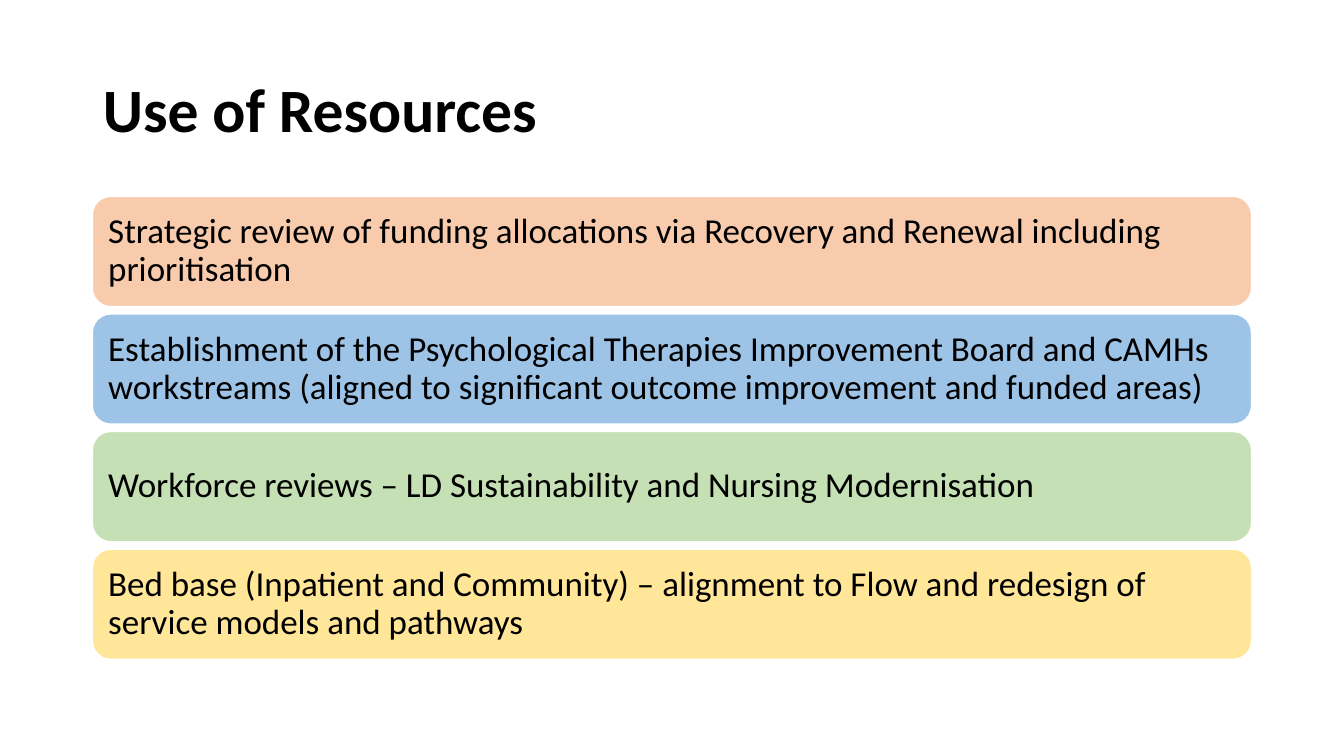
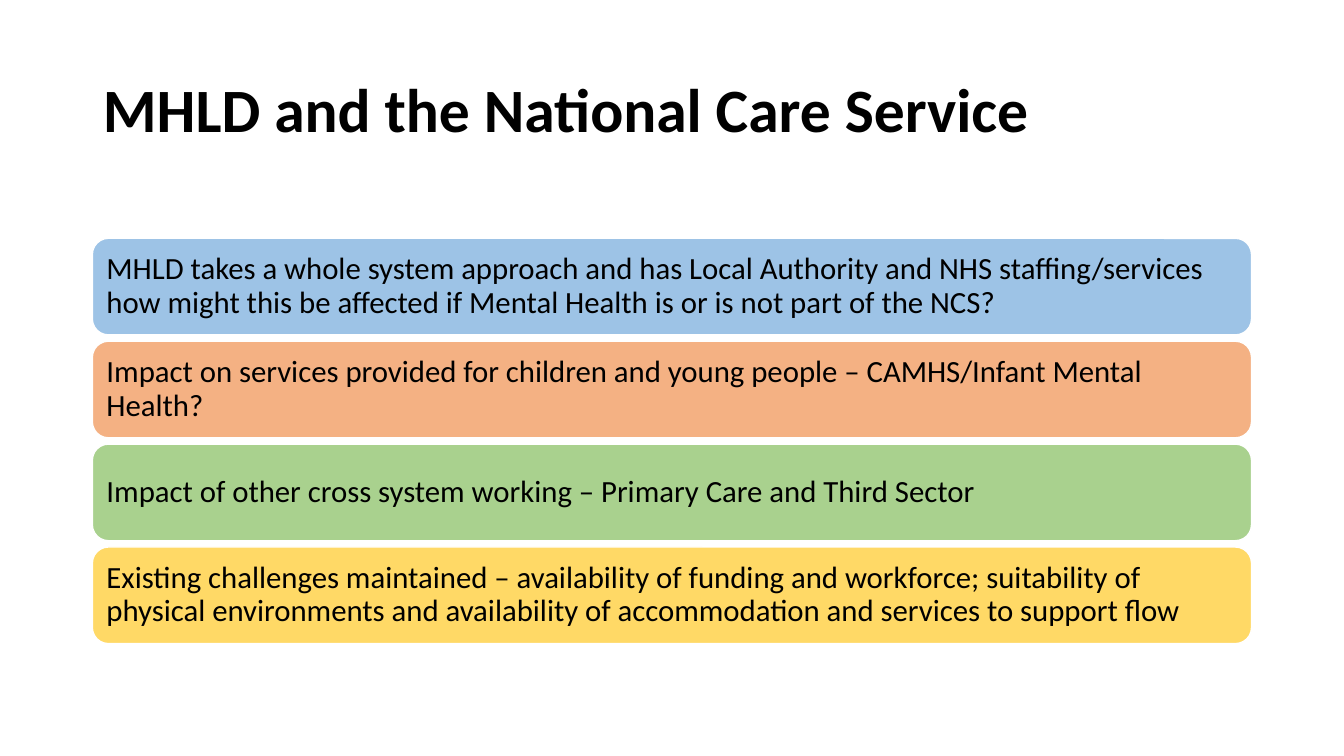
"""Build two slides of stacked, coloured statement bars."""
from dataclasses import dataclass

from pptx import Presentation
from pptx.dml.color import RGBColor
from pptx.enum.shapes import MSO_SHAPE
from pptx.enum.text import MSO_ANCHOR, MSO_AUTO_SIZE, PP_ALIGN
from pptx.presentation import Presentation as Deck
from pptx.slide import Slide
from pptx.text.text import TextFrame
from pptx.util import Emu, Pt

EMU_PER_PX = 9525
SLIDE_WIDTH, SLIDE_HEIGHT = 1280, 720
LEFT, CONTENT_WIDTH = 88, 1104
TITLE_TOP, TITLE_HEIGHT, TITLE_SIZE = 38, 139, 44
TITLE_INSET_X, TITLE_INSET_Y = 10, 5
FONT = "Calibri"
BLACK, WHITE = "000000", "FFFFFF"
BLUE = "9DC3E6"
PALE_ORANGE, PALE_GREEN, PALE_YELLOW = "F8CBAD", "C5E0B4", "FFE699"
ORANGE, GREEN, YELLOW = "F4B183", "A9D18E", "FFD966"


@dataclass(frozen=True)
class Bar:
    """One statement and its fill colour."""
    text: str
    fill: str


@dataclass(frozen=True)
class BarSlide:
    """A title above an evenly spaced stack of bars."""
    title: str
    top: int
    bar_height: int
    pitch: int
    inset: int
    text_size: int
    bars: tuple[Bar, ...]


SLIDES = (
    BarSlide("Use of Resources", 187, 105, 112, 10, 25, (
        Bar("Strategic review of funding allocations via Recovery and Renewal "
            "including prioritisation", PALE_ORANGE),
        Bar("Establishment of the Psychological Therapies Improvement Board and "
            "CAMHs workstreams (aligned to significant outcome improvement and "
            "funded areas)", BLUE),
        Bar("Workforce reviews – LD Sustainability and Nursing Modernisation",
            PALE_GREEN),
        Bar("Bed base (Inpatient and Community) – alignment to Flow and redesign "
            "of service models and pathways", PALE_YELLOW),
    )),
    BarSlide("MHLD and the National Care Service", 227, 92, 98, 9, 22, (
        Bar("MHLD takes a whole system approach and has Local Authority and NHS "
            "staffing/services how might this be affected if Mental Health is or "
            "is not part of the NCS?", BLUE),
        Bar("Impact on services provided for children and young people – "
            "CAMHS/Infant Mental Health?", ORANGE),
        Bar("Impact of other cross system working – Primary Care and Third Sector",
            GREEN),
        Bar("Existing challenges maintained – availability of funding and "
            "workforce; suitability of physical environments and availability of "
            "accommodation and services to support flow", YELLOW),
    )),
)


def px(length: int) -> Emu:
    """Convert pixels to EMU."""
    return Emu(length * EMU_PER_PX)


def colour(code: str) -> RGBColor:
    """Turn a hex string into a colour."""
    return RGBColor.from_string(code)


def write(frame: TextFrame, text: str, size: int, inset_x: int, inset_y: int,
          bold: bool = False) -> None:
    """Set left-aligned, vertically centred text in a frame."""
    frame.text = text
    frame.word_wrap = True
    frame.auto_size = MSO_AUTO_SIZE.NONE
    frame.vertical_anchor = MSO_ANCHOR.MIDDLE
    frame.margin_left = frame.margin_right = px(inset_x)
    frame.margin_top = frame.margin_bottom = px(inset_y)
    paragraph = frame.paragraphs[0]
    paragraph.alignment = PP_ALIGN.LEFT
    paragraph.line_spacing = 0.9
    font = paragraph.runs[0].font
    font.name, font.size, font.bold = FONT, Pt(size), bold
    font.color.rgb = colour(BLACK)


def add_title(slide: Slide, text: str) -> None:
    """Place and style the title placeholder."""
    title = slide.shapes.title
    title.left, title.top = px(LEFT), px(TITLE_TOP)
    title.width, title.height = px(CONTENT_WIDTH), px(TITLE_HEIGHT)
    write(title.text_frame, text, TITLE_SIZE, TITLE_INSET_X, TITLE_INSET_Y, bold=True)


def add_bar(slide: Slide, bar: Bar, top: int, content: BarSlide) -> None:
    """Draw one rounded bar with its statement."""
    panel = slide.shapes.add_shape(
        MSO_SHAPE.ROUNDED_RECTANGLE,
        px(LEFT), px(top), px(CONTENT_WIDTH), px(content.bar_height))
    panel.shadow.inherit = False
    panel.fill.solid()
    panel.fill.fore_color.rgb = colour(bar.fill)
    panel.line.color.rgb = colour(WHITE)
    panel.line.width = Pt(1)
    write(panel.text_frame, bar.text, content.text_size, content.inset, content.inset)


def add_bar_slide(deck: Deck, content: BarSlide) -> None:
    """Add a slide with a title and its stack of bars."""
    slide = deck.slides.add_slide(deck.slide_layouts.get_by_name("Title Only"))
    add_title(slide, content.title)
    for row, bar in enumerate(content.bars):
        add_bar(slide, bar, content.top + row * content.pitch, content)


def main() -> None:
    """Build and save the presentation."""
    deck = Presentation()
    deck.slide_width, deck.slide_height = px(SLIDE_WIDTH), px(SLIDE_HEIGHT)
    for content in SLIDES:
        add_bar_slide(deck, content)
    deck.save("out.pptx")


if __name__ == "__main__":
    main()
